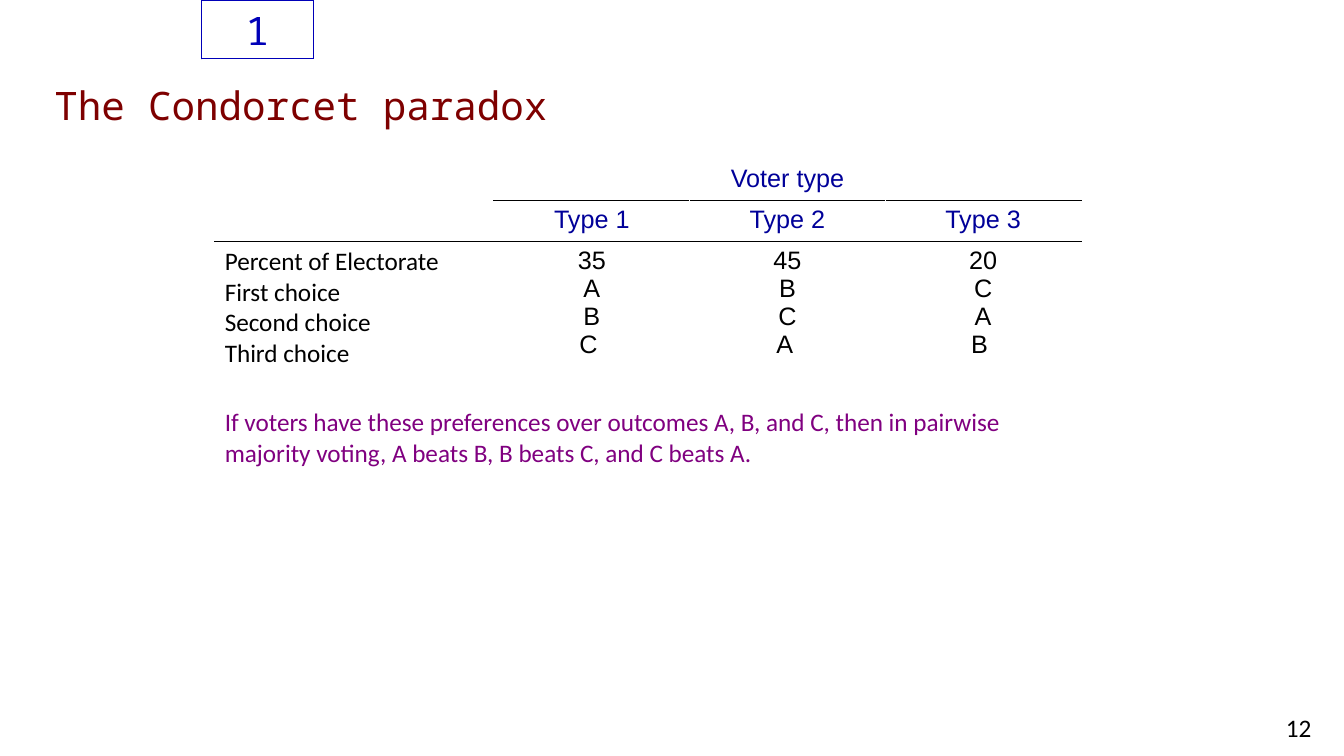
from dataclasses import dataclass

from lxml.etree import SubElement
from pptx import Presentation
from pptx.dml.color import RGBColor
from pptx.enum.dml import MSO_LINE
from pptx.enum.shapes import MSO_SHAPE
from pptx.enum.text import MSO_ANCHOR, PP_ALIGN
from pptx.oxml.ns import qn
from pptx.slide import Slide
from pptx.table import _Cell
from pptx.text.text import TextFrame
from pptx.util import Cm, Pt


@dataclass(frozen=True)
class Theme:
    red: str = "7E0000"
    blue: str = "0000B8"
    navy: str = "000099"
    purple: str = "800080"
    black: str = "000000"
    mono: str = "Noto Sans Mono"
    sans: str = "Arial"
    body: str = "Calibri"
    large: int = 28
    small: int = 18


@dataclass(frozen=True)
class Style:
    font: str
    size: int
    color: str
    align: PP_ALIGN = PP_ALIGN.LEFT


@dataclass(frozen=True)
class Label:
    text: str
    left: float
    top: float
    width: float
    height: float
    style: Style
    framed: bool = False


@dataclass(frozen=True)
class Entry:
    row: int
    col: int
    text: str
    style: Style
    span: int = 1
    top: float = 0.13


THEME = Theme()
CENTER = PP_ALIGN.CENTER
TITLE = Style(THEME.mono, THEME.large, THEME.red)
BADGE = Style(THEME.mono, THEME.large, THEME.blue, CENTER)
PAGE = Style(THEME.body, THEME.small, THEME.black, CENTER)
HEAD = Style(THEME.sans, THEME.small, THEME.navy, CENTER)
SIDE = Style(THEME.body, THEME.small, THEME.black)
VOTE = Style(THEME.sans, THEME.small, THEME.black, CENTER)
NOTE = Style(THEME.body, THEME.small, THEME.purple)

LABELS = [
    Label("The Condorcet paradox", 1.12, 1.9, 32.74, 1.48, TITLE),
    Label("1", 5.08, 0, 2.82, 1.48, BADGE, True),
    Label("12", 31.6, 17.83, 2.26, 1.02, PAGE),
]
WIDTHS = [7.04, 4.93, 4.93, 4.93]
HEIGHTS = [1.03, 1.03, 3.35, 2.5]
VOTES = ["35\nA\nB\nC ", "45\nB\nC\nA ", "20\nC\nA\nB "]
CHOICE = "Percent of Electorate\nFirst choice\nSecond choice\nThird choice"
CLAIM = (
    "If voters have these preferences over outcomes A, B, and C, then in "
    "pairwise majority voting, A beats B, B beats C, and C beats A."
)
ENTRIES = [
    Entry(0, 1, "Voter type", HEAD, 3),
    *(Entry(1, col, f"Type {col}", HEAD) for col in range(1, 4)),
    Entry(2, 0, CHOICE, SIDE),
    *(Entry(2, col, text, VOTE) for col, text in enumerate(VOTES, 1)),
    Entry(3, 0, CLAIM, NOTE, 4, 0.85),
]


def write(frame: TextFrame, text: str, style: Style) -> None:
    frame.text = text
    frame.word_wrap = True
    for para in frame.paragraphs:
        para.alignment = style.align
        for run in para.runs:
            run.font.name = style.font
            run.font.size = Pt(style.size)
            run.font.color.rgb = RGBColor.from_string(style.color)


def place(slide: Slide, label: Label) -> None:
    area = [Cm(n) for n in (label.left, label.top, label.width, label.height)]
    if label.framed:
        shape = slide.shapes.add_shape(MSO_SHAPE.RECTANGLE, *area)
        shape.shadow.inherit = False
        shape.fill.background()
        shape.line.color.rgb = RGBColor.from_string(THEME.blue)
        shape.line.width = Pt(0.25)
        shape.line.dash_style = MSO_LINE.ROUND_DOT
    else:
        shape = slide.shapes.add_textbox(*area)
    write(shape.text_frame, label.text, label.style)
    shape.text_frame.vertical_anchor = MSO_ANCHOR.MIDDLE


def rule(cell: _Cell, side: str) -> None:
    props = cell._tc.get_or_add_tcPr()
    line = SubElement(props, qn(f"a:{side}"), w=str(Pt(1)))
    fill = SubElement(line, qn("a:solidFill"))
    SubElement(fill, qn("a:srgbClr"), val=THEME.black)


def tally(slide: Slide) -> None:
    frame = slide.shapes.add_table(
        len(HEIGHTS), len(WIDTHS), Cm(5.41), Cm(4.02),
        Cm(sum(WIDTHS)), Cm(sum(HEIGHTS)),
    )
    table = frame.table
    table.first_row = False
    table.horz_banding = False
    for col, width in zip(table.columns, WIDTHS):
        col.width = Cm(width)
    for row, height in zip(table.rows, HEIGHTS):
        row.height = Cm(height)
    for col in range(len(WIDTHS)):
        if col:
            rule(table.cell(1, col), "lnT")
            rule(table.cell(0, col), "lnB")
        rule(table.cell(1, col), "lnB")
        rule(table.cell(2, col), "lnT")
    for cell in table.iter_cells():
        cell.fill.background()
    for entry in ENTRIES:
        cell = table.cell(entry.row, entry.col)
        if entry.span > 1:
            cell.merge(table.cell(entry.row, entry.col + entry.span - 1))
        cell.margin_top = Cm(entry.top)
        write(cell.text_frame, entry.text, entry.style)


def main() -> None:
    deck = Presentation()
    deck.slide_width = Cm(33.87)
    deck.slide_height = Cm(19.05)
    slide = deck.slides.add_slide(deck.slide_layouts[6])
    for label in LABELS:
        place(slide, label)
    tally(slide)
    deck.save("out.pptx")


if __name__ == "__main__":
    main()
